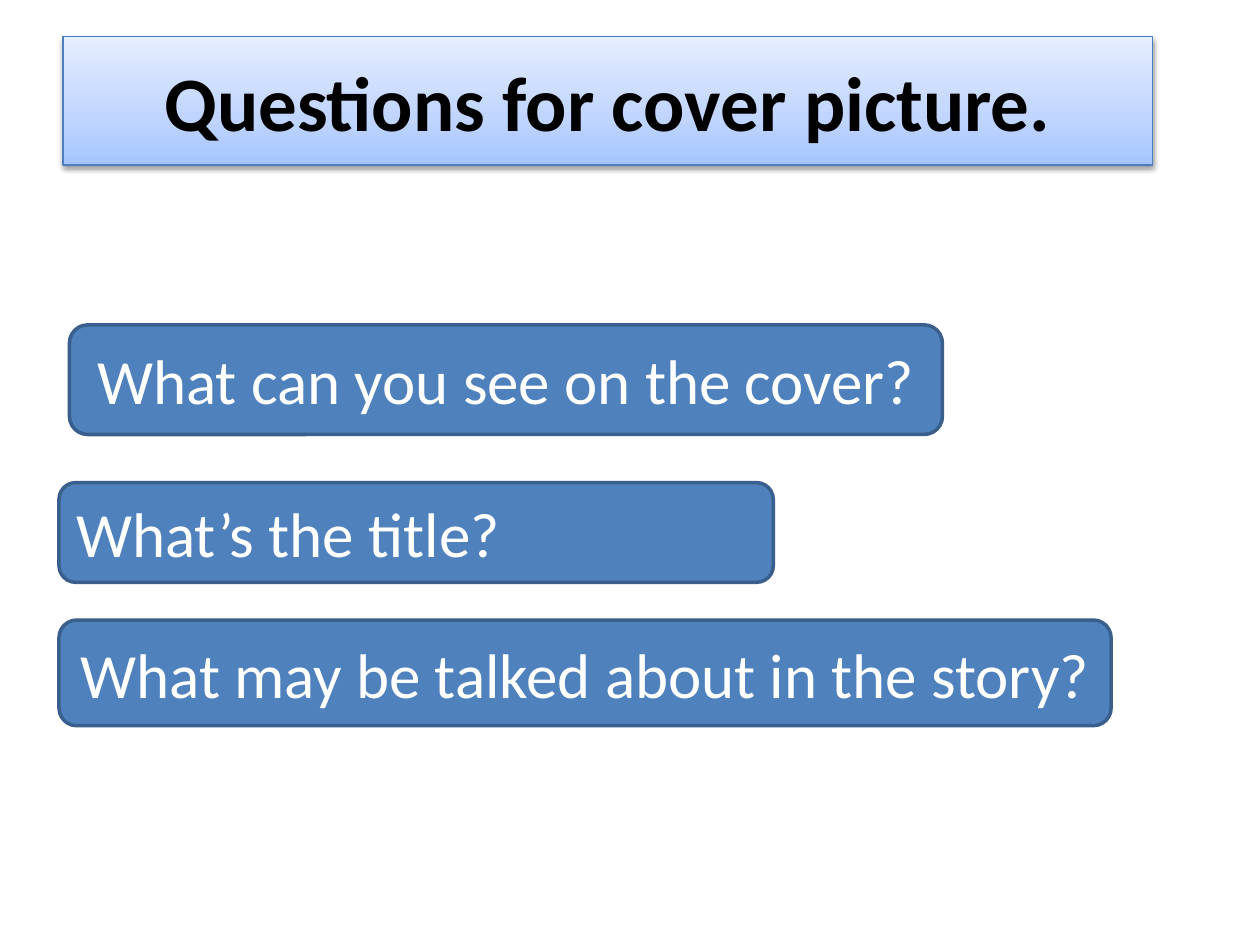
"""Build a slide with a title banner and three question boxes."""
from lxml import etree
from pptx import Presentation
from pptx.dml.color import RGBColor
from pptx.enum.shapes import MSO_SHAPE
from pptx.enum.text import MSO_ANCHOR, MSO_AUTO_SIZE, PP_ALIGN
from pptx.oxml import parse_xml
from pptx.oxml.ns import nsdecls, qn
from pptx.util import Cm, Pt

ROUNDED = MSO_SHAPE.ROUNDED_RECTANGLE
MIDDLE = MSO_ANCHOR.MIDDLE
NO_AUTOFIT = MSO_AUTO_SIZE.NONE
LEFT, CENTER = PP_ALIGN.LEFT, PP_ALIGN.CENTER

BLACK = RGBColor(0x00, 0x00, 0x00)
WHITE = RGBColor(0xFF, 0xFF, 0xFF)
BLUE = RGBColor(0x4F, 0x81, 0xBD)
DARK_BLUE = RGBColor(0x3A, 0x5F, 0x8C)
BANNER_LINE = RGBColor(0x4B, 0x7E, 0xBC)
BANNER_STOPS = (
    (0, RGBColor(0xA4, 0xC4, 0xFF)),
    (35, RGBColor(0xBF, 0xD4, 0xFF)),
    (100, RGBColor(0xE6, 0xEE, 0xFF)),
)

QUESTIONS = (
    ("What can you see on the cover?", (1.4, 6.55, 17.6, 2.21), CENTER),
    ("What’s the title?", (1.19, 9.73, 14.4, 2.01), LEFT),
    ("What may be talked about in the story?", (1.19, 12.5, 21.21, 2.13), CENTER),
)


def set_attributes(target, values):
    """Set every named value on the target."""
    for name, value in values.items():
        setattr(target, name, value)


class QuestionSlide:
    """Holds the text style and the current slide."""

    frame_format = {"word_wrap": True, "vertical_anchor": MIDDLE, "auto_size": NO_AUTOFIT}
    title_font = {"name": "Calibri", "size": Pt(44), "bold": True}
    question_font = {"name": "Calibri", "size": Pt(36), "bold": False}

    def __init__(self, presentation):
        self.slide = presentation.slides.add_slide(presentation.slide_layouts[5])

    def add_text(self, shape, text, font, color, alignment):
        """Put one formatted paragraph in the shape."""
        set_attributes(shape.text_frame, self.frame_format)
        paragraph = shape.text_frame.paragraphs[0]
        paragraph.alignment = alignment
        run = paragraph.add_run()
        run.text = text
        set_attributes(run.font, font)
        run.font.color.rgb = color

    def outline(self, shape, color, width):
        """Give the shape a solid outline."""
        shape.line.color.rgb = color
        shape.line.width = Pt(width)

    def title(self, text, box):
        """Turn the title placeholder into a rounded gradient banner."""
        shape = self.slide.shapes.title
        set_attributes(shape, dict(zip(("left", "top", "width", "height"), map(Cm, box))))
        properties = shape.element.spPr
        geometry = etree.SubElement(properties, qn("a:prstGeom"), prst="roundRect")
        etree.SubElement(geometry, qn("a:avLst"))
        stops = "".join(
            f'<a:gs pos="{position * 1000}"><a:srgbClr val="{color}"/></a:gs>'
            for position, color in BANNER_STOPS
        )
        properties.append(parse_xml(
            f'<a:gradFill {nsdecls("a")} rotWithShape="1"><a:gsLst>{stops}</a:gsLst>'
            '<a:lin ang="16200000" scaled="0"/></a:gradFill>'
        ))
        self.outline(shape, BANNER_LINE, 0.75)
        properties.append(parse_xml(
            f'<a:effectLst {nsdecls("a")}><a:outerShdw blurRad="{Pt(3.1)}" '
            f'dist="{Pt(1.6)}" dir="5400000" rotWithShape="0">'
            f'<a:srgbClr val="{BLACK}"><a:alpha val="38000"/></a:srgbClr>'
            '</a:outerShdw></a:effectLst>'
        ))
        self.add_text(shape, text, self.title_font, BLACK, CENTER)

    def question(self, text, box, alignment):
        """Add a rounded box with one question."""
        shape = self.slide.shapes.add_shape(ROUNDED, *map(Cm, box))
        shape.shadow.inherit = False
        shape.fill.solid()
        shape.fill.fore_color.rgb = BLUE
        self.outline(shape, DARK_BLUE, 2)
        self.add_text(shape, text, self.question_font, WHITE, alignment)


def main():
    """Build and save the presentation."""
    presentation = Presentation()
    set_attributes(presentation, {"slide_width": Cm(25.4), "slide_height": Cm(19.05)})
    slide = QuestionSlide(presentation)
    slide.title("Questions for cover picture.", (1.27, 0.74, 21.97, 2.59))
    for text, box, alignment in QUESTIONS:
        slide.question(text, box, alignment)
    presentation.save("out.pptx")


if __name__ == "__main__":
    main()
